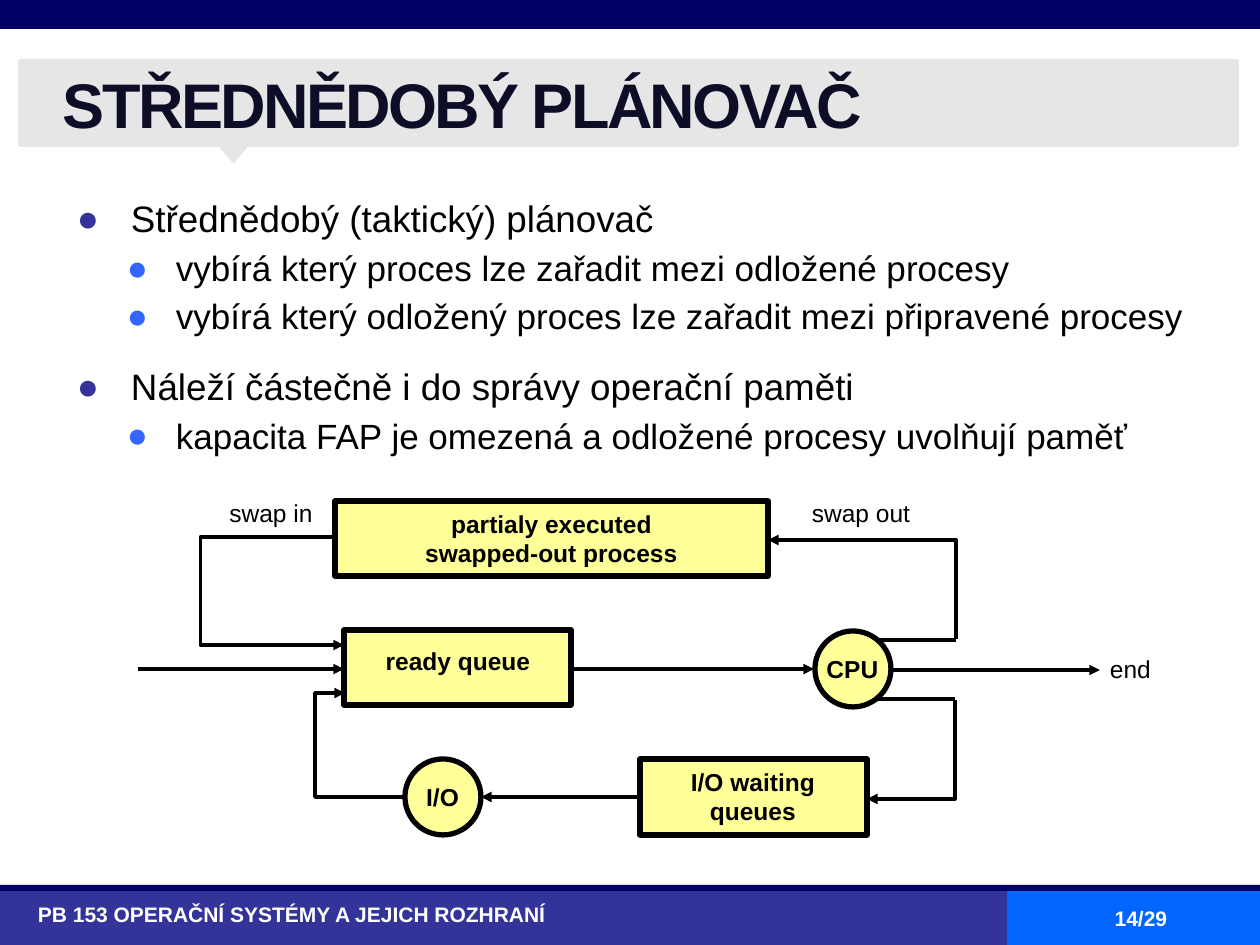
from lxml.etree import SubElement
from pptx import Presentation
from pptx.dml.color import RGBColor
from pptx.enum.shapes import MSO_CONNECTOR as LINE, MSO_SHAPE as SHAPE
from pptx.enum.text import MSO_ANCHOR as ANCHOR, PP_ALIGN as ALIGN
from pptx.oxml.ns import qn
from pptx.util import Pt

EMU_PER_INCH = 914400
PX_PER_INCH = 126
FONT = "Arial"
COLORS = {
    "navy": "000066", "indigo": "333399", "blue": "0066FF", "bullet": "3366FF",
    "grey": "E6E6E6", "title": "0D0D28", "yellow": "FFFF99",
    "black": "000000", "white": "FFFFFF",
}


def px(length):
    return round(length * EMU_PER_INCH / PX_PER_INCH)


def rgb(name):
    return RGBColor.from_string(COLORS[name])


class SlideBuilder:
    levels = [
        {"size": 21, "before": 18, "margin": 54, "hang": 54, "bullet": "indigo"},
        {"size": 20, "before": 6, "margin": 99, "hang": 49, "bullet": "bullet"},
    ]

    def __init__(self, slide):
        self.slide = slide

    def shape(self, kind, box, fill, outline=None):
        shape = self.slide.shapes.add_shape(kind, *map(px, box))
        shape.shadow.inherit = False
        shape.fill.solid()
        shape.fill.fore_color.rgb = rgb(fill)
        if outline:
            shape.line.color.rgb = rgb(outline)
            shape.line.width = Pt(3)
        else:
            shape.line.fill.background()
        return shape

    def text_frame(self, box, margins):
        frame = self.slide.shapes.add_textbox(*map(px, box)).text_frame
        frame.word_wrap = True
        frame.margin_left = frame.margin_right = px(margins[0])
        frame.margin_top = frame.margin_bottom = px(margins[1])
        return frame

    def style(self, paragraph, size, color, bold=False):
        for run in paragraph.runs:
            run.font.name = FONT
            run.font.size = Pt(size)
            run.font.bold = bold
            run.font.color.rgb = rgb(color)

    def label(self, text, box, size=14, color="black", bold=False,
              align=ALIGN.CENTER, margins=(0, 6)):
        frame = self.text_frame(box, margins)
        frame.text = text
        for paragraph in frame.paragraphs:
            paragraph.alignment = align
            self.style(paragraph, size, color, bold)
        return frame

    def title(self, text, box):
        frame = self.label(text, box, 36, "title", True, ALIGN.LEFT, (0, 0))
        frame.vertical_anchor = ANCHOR.MIDDLE
        heading = frame.paragraphs[0]
        heading.line_spacing = Pt(40)
        heading.runs[0].font._element.set("spc", "-150")

    def outline(self, items, box):
        frame = self.text_frame(box, (13, 6))
        for index, (level, text) in enumerate(items):
            look = self.levels[level]
            item = frame.add_paragraph() if index else frame.paragraphs[0]
            item.text = text
            item.level = level
            item.line_spacing = 0.9
            if index:
                item.space_before = Pt(look["before"])
            props = item._p.get_or_add_pPr()
            props.set("marL", str(px(look["margin"])))
            props.set("indent", str(-px(look["hang"])))
            color = SubElement(props, qn("a:buClr"))
            SubElement(color, qn("a:srgbClr"), val=COLORS[look["bullet"]])
            SubElement(props, qn("a:buFont"), typeface=FONT)
            SubElement(props, qn("a:buChar"), char="●")
            self.style(item, look["size"], "black")

    def node(self, kind, box, text, label_box):
        self.shape(kind, box, "yellow", "black")
        self.label(text, label_box, bold=True)

    def line(self, start, end, arrow="tailEnd", kind=LINE.STRAIGHT):
        line = self.slide.shapes.add_connector(kind, *map(px, start + end))
        line.line.color.rgb = rgb("black")
        line.line.width = Pt(2)
        if arrow:
            SubElement(line.line._get_or_add_ln(), qn(f"a:{arrow}"), type="triangle")
        SubElement(line._element.spPr, qn("a:effectLst"))
        return line

    def elbow(self, start, end, bend_x, arrow="tailEnd"):
        line = self.line(start, end, arrow, LINE.ELBOW)
        line_bend = (bend_x - start[0]) / (end[0] - start[0])
        guides = line._element.spPr.find(qn("a:prstGeom")).get_or_add_avLst()
        SubElement(guides, qn("a:gd"), name="adj1", fmla=f"val {round(line_bend * 100000)}")


def main():
    deck = Presentation()
    deck.slide_width, deck.slide_height = px(1260), px(945)
    page = SlideBuilder(deck.slides.add_slide(deck.slide_layouts[6]))

    page.shape(SHAPE.RECTANGLE, (0, 0, 1260, 29), "navy")
    page.shape(SHAPE.RECTANGLE, (0, 891, 1260, 54), "indigo")
    page.shape(SHAPE.RECTANGLE, (1007, 891, 253, 54), "blue")
    page.label("14/29", (1027, 906, 228, 25), 12, "white", True, margins=(0, 0))
    page.shape(SHAPE.RECTANGLE, (0, 885, 1260, 6), "navy")
    banner = page.shape(SHAPE.ROUNDED_RECTANGLE, (18, 59, 1221, 88), "grey")
    banner.adjustments[0] = 0.035
    pointer = page.shape(SHAPE.ISOSCELES_TRIANGLE, (217, 144, 33, 20), "grey")
    pointer.rotation = 180

    page.outline([
        (0, "Střednědobý (taktický) plánovač"),
        (1, "vybírá který proces lze zařadit mezi odložené procesy"),
        (1, "vybírá který odložený proces lze zařadit mezi připravené procesy"),
        (0, "Náleží částečně i do správy operační paměti"),
        (1, "kapacita FAP je omezená a odložené procesy uvolňují paměť"),
    ], (64, 195, 1160, 268))
    page.title("STŘEDNĚDOBÝ PLÁNOVAČ", (63, 38, 1172, 137))
    page.label("PB 153 OPERAČNÍ SYSTÉMY A JEJICH ROZHRANÍ", (25, 896, 983, 49),
               12, "white", True, ALIGN.LEFT, (13, 6))

    page.node(SHAPE.OVAL, (815, 631, 76, 76), "CPU", (814, 648, 77, 43))
    page.node(SHAPE.RECTANGLE, (344, 630, 227, 75), "ready queue", (369, 640, 178, 54))
    page.node(SHAPE.OVAL, (405, 759, 76, 76), "I/O", (413, 776, 59, 43))
    page.node(SHAPE.RECTANGLE, (640, 759, 227, 76), "I/O waiting\nqueues",
              (664, 761, 178, 72))
    page.node(SHAPE.RECTANGLE, (335, 501, 433, 75),
              "partialy executed\nswapped-out process", (382, 503, 339, 72))

    page.elbow((335, 537), (344, 645), 200)
    page.line((893, 670), (1100, 670))
    page.line((571, 669), (814, 669))
    page.label("swap in", (207, 492, 128, 43))
    page.label("swap out", (787, 492, 148, 43))
    page.elbow((405, 797), (345, 693), 315)
    page.line((640, 797), (481, 797))
    page.elbow((867, 799), (955, 700), 955, "headEnd")
    page.line((876, 699), (955, 699), None)
    page.elbow((768, 540), (956, 639), 956, "headEnd")
    page.line((876, 640), (956, 640), None)
    page.line((138, 669), (344, 669))
    page.label("end", (1110, 648, 135, 43), align=ALIGN.LEFT)

    deck.save("out.pptx")


if __name__ == "__main__":
    main()
